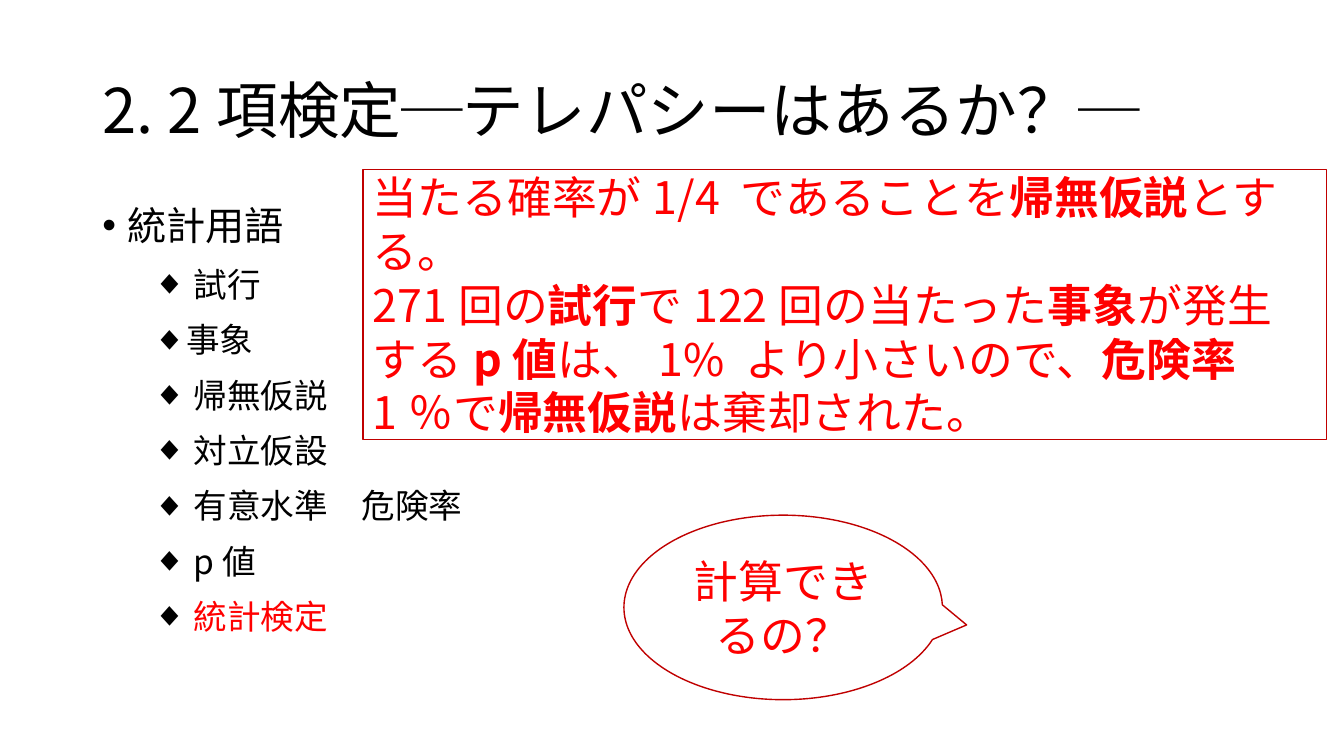
from lxml.etree import SubElement
from pptx import Presentation
from pptx.dml.color import RGBColor
from pptx.enum.shapes import MSO_SHAPE as SHAPE
from pptx.enum.text import MSO_ANCHOR as ANCHOR, MSO_AUTO_SIZE as AUTOSIZE, PP_ALIGN as ALIGN
from pptx.oxml.ns import qn
from pptx.util import Pt

FONT = "Noto Sans CJK JP"
BLACK = RGBColor(0x00, 0x00, 0x00)
RED = RGBColor(0xFF, 0x00, 0x00)
DARK_RED = RGBColor(0xC0, 0x00, 0x00)

TERMS = ["試行", "事象", "帰無仮説", "対立仮設", "有意水準　危険率", "p値"]
CONCLUSION = [
    "当たる確率が1/4 であることを*帰無仮説*とする。",
    "271回の*試行*で122回の当たった*事象*が発生する*p値*は、1% より小さいので、"
    "*危険率*1％で*帰無仮説*は棄却された。",
]


def set_attrs(obj, values):
    for name, value in values.items():
        setattr(obj, name, value)


def place(sp, left, top, width, height):
    set_attrs(sp, {"left": Pt(left), "top": Pt(top), "width": Pt(width), "height": Pt(height)})


def add_run(p, text, size, color=BLACK, bold=False):
    r = p.add_run()
    r.text = text
    set_attrs(r.font, {"name": FONT, "size": Pt(size), "bold": bold})
    r.font.color.rgb = color
    SubElement(r.font._element, qn("a:ea")).set("typeface", FONT)


def next_paragraph(tf):
    return tf.paragraphs[0] if not tf.paragraphs[0].runs else tf.add_paragraph()


def add_bullet(tf, char, indent, size, parts, values):
    p = next_paragraph(tf)
    set_attrs(p, values)
    pPr = p._p.get_or_add_pPr()
    pPr.set("marL", str(Pt(indent)))
    pPr.set("indent", str(Pt(-18)))
    SubElement(pPr, qn("a:buFont")).set("typeface", "Arial")
    SubElement(pPr, qn("a:buChar")).set("char", char)
    for text, color in parts:
        add_run(p, text, size, color)


def add_title(slide, text):
    sp = slide.shapes.title
    place(sp, 66, 28.8, 828, 104.4)
    tf = sp.text_frame
    set_attrs(tf, {"vertical_anchor": ANCHOR.MIDDLE, "auto_size": AUTOSIZE.NONE, "word_wrap": True})
    p = tf.paragraphs[0]
    set_attrs(p, {"alignment": ALIGN.LEFT, "line_spacing": 0.9})
    add_run(p, text, 44)


def add_terms(slide):
    tf = slide.shapes.add_textbox(Pt(66), Pt(144), Pt(858), Pt(342.7)).text_frame
    tf.word_wrap = True
    add_bullet(tf, "•", 18, 28, [("統計用語", BLACK)],
               {"line_spacing": 0.9, "space_before": Pt(10)})
    rows = [[(term if term == "事象" else " " + term, BLACK)] for term in TERMS]
    rows.append([(" ", BLACK), ("統計検定", RED)])
    for parts in rows:
        add_bullet(tf, "◆", 54, 24, parts,
                   {"level": 1, "line_spacing": 1.2, "space_before": Pt(5)})


def add_outlined(slide, kind, box, lines, align):
    sp = slide.shapes.add_shape(kind, *map(Pt, box))
    sp.shadow.inherit = False
    sp.fill.background()
    sp.line.color.rgb = DARK_RED
    sp.line.width = Pt(1)
    tf = sp.text_frame
    set_attrs(tf, {"word_wrap": True, "vertical_anchor": ANCHOR.MIDDLE})
    for line in lines:
        p = next_paragraph(tf)
        p.alignment = align
        for i, text in enumerate(line.split("*")):
            add_run(p, text, 32, RED, i % 2 == 1)
    return sp


def main():
    prs = Presentation()
    set_attrs(prs, {"slide_width": Pt(960), "slide_height": Pt(540)})
    slide = prs.slides.add_slide(prs.slide_layouts[5])
    add_title(slide, "2. 2項検定─テレパシーはあるか？─")
    add_terms(slide)
    add_outlined(slide, SHAPE.RECTANGLE, (259.2, 121, 688.3, 193), CONCLUSION, ALIGN.LEFT)
    callout = add_outlined(slide, SHAPE.OVAL_CALLOUT, (445.7, 368, 227.5, 131.8),
                           ["計算できるの？"], ALIGN.CENTER)
    callout.adjustments[0] = 0.576
    callout.adjustments[1] = 0.095
    prs.save("out.pptx")


if __name__ == "__main__":
    main()
